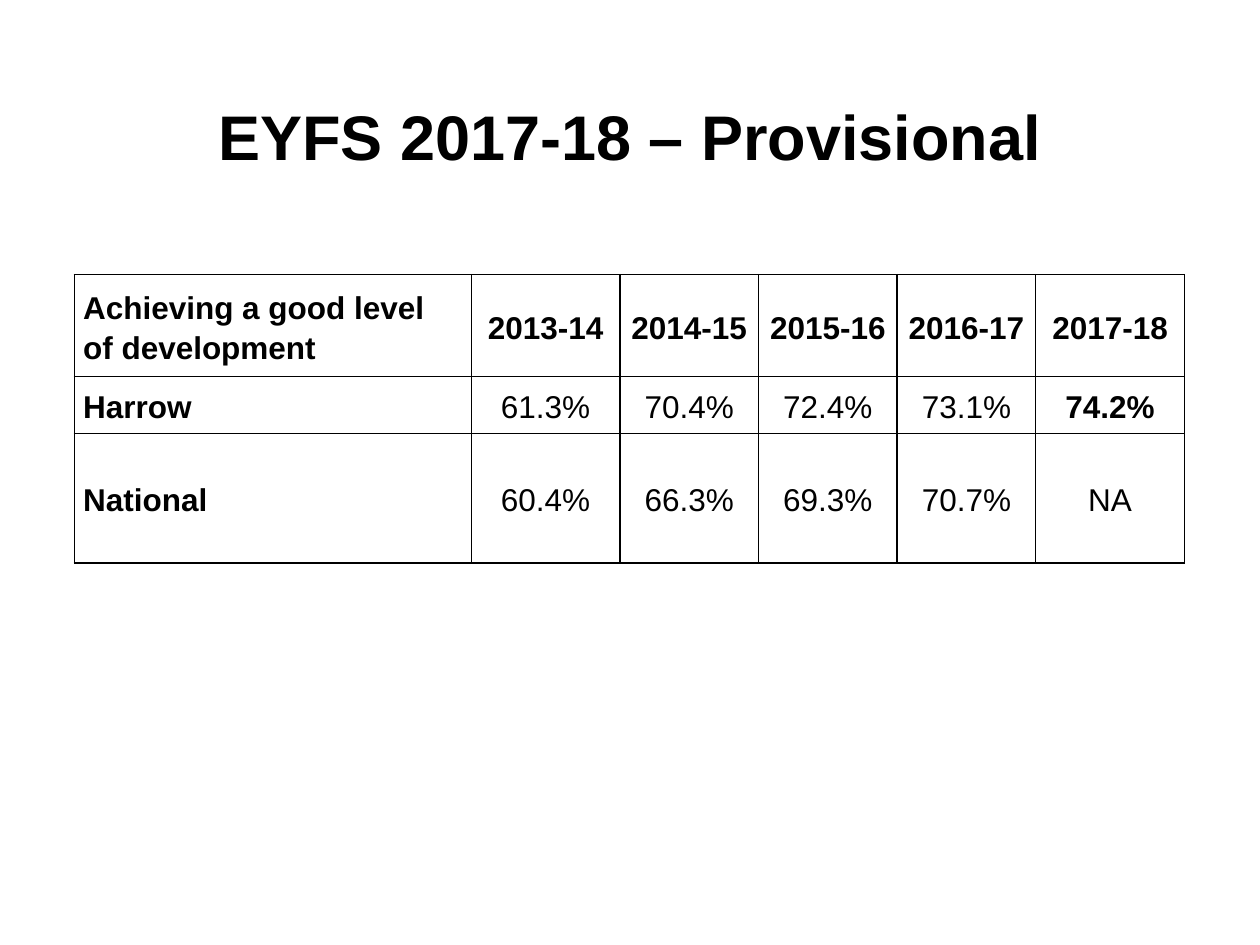
from pptx import Presentation
from pptx.dml.color import RGBColor
from pptx.enum.text import MSO_ANCHOR as Anchor, PP_ALIGN as Align
from pptx.oxml.ns import qn
from pptx.util import Inches, Pt
from lxml.etree import SubElement

FONT = "Arial"
BLACK = "000000"
WHITE = "FFFFFF"

COLUMN_WIDTHS = [3.15, 1.18, 1.1, 1.1, 1.1, 1.18]
ROW_HEIGHTS = [0.81, 0.45, 1.03]
RESULTS = [
    ["Achieving a good level of development",
     "2013-14", "2014-15", "2015-16", "2016-17", "2017-18"],
    ["Harrow", "61.3%", "70.4%", "72.4%", "73.1%", "74.2%"],
    ["National", "60.4%", "66.3%", "69.3%", "70.7%", "NA"],
]
HIGHLIGHT = "74.2%"


def color(value):
    return RGBColor.from_string(value)


def write_text(frame, text, size=18, bold=False, align=Align.LEFT, line_spacing=None):
    frame.word_wrap = True
    para = frame.paragraphs[0]
    para.alignment = align
    para.line_spacing = line_spacing
    span = para.add_run()
    span.text = text
    span.font.name = FONT
    span.font.size = Pt(size)
    span.font.bold = bold
    span.font.color.rgb = color(BLACK)


def add_title(page, text):
    box = page.shapes.add_textbox(Inches(0.5), Inches(0.6), Inches(9), Inches(0.95))
    box.text_frame.vertical_anchor = Anchor.MIDDLE
    write_text(box.text_frame, text, size=36, bold=True, align=Align.CENTER)


def add_borders(cell, value=BLACK, width=1):
    properties = cell._tc.get_or_add_tcPr()
    for side in ("a:lnL", "a:lnR", "a:lnT", "a:lnB"):
        line = SubElement(properties, qn(side), w=str(Pt(width)))
        fill = SubElement(line, qn("a:solidFill"))
        SubElement(fill, qn("a:srgbClr"), val=value)


def format_cell(cell):
    cell.margin_left = cell.margin_right = Inches(0.07)
    cell.margin_top = cell.margin_bottom = 0
    cell.vertical_anchor = Anchor.MIDDLE
    # Borders come before the fill in the cell properties
    add_borders(cell)
    cell.fill.background()


def add_results_table(page):
    table = page.shapes.add_table(
        len(ROW_HEIGHTS), len(COLUMN_WIDTHS), Inches(0.59), Inches(2.18),
        Inches(sum(COLUMN_WIDTHS)), Inches(sum(ROW_HEIGHTS))).table
    table.first_row = table.horz_banding = False
    for column, width in zip(table.columns, COLUMN_WIDTHS):
        column.width = Inches(width)
    for row, height in zip(table.rows, ROW_HEIGHTS):
        row.height = Inches(height)

    # Headings are bold, and so is the latest local result
    for r, values in enumerate(RESULTS):
        for c, text in enumerate(values):
            cell = table.cell(r, c)
            format_cell(cell)
            write_text(cell.text_frame, text,
                       bold=r == 0 or c == 0 or text == HIGHLIGHT,
                       align=Align.CENTER if c else Align.LEFT,
                       line_spacing=1.15)


def main():
    deck = Presentation()
    deck.slide_width, deck.slide_height = Inches(10), Inches(7.5)
    page = deck.slides.add_slide(deck.slide_layouts[6])
    page.background.fill.solid()
    page.background.fill.fore_color.rgb = color(WHITE)

    add_title(page, "EYFS 2017-18 – Provisional")
    add_results_table(page)
    deck.save("out.pptx")


if __name__ == "__main__":
    main()
